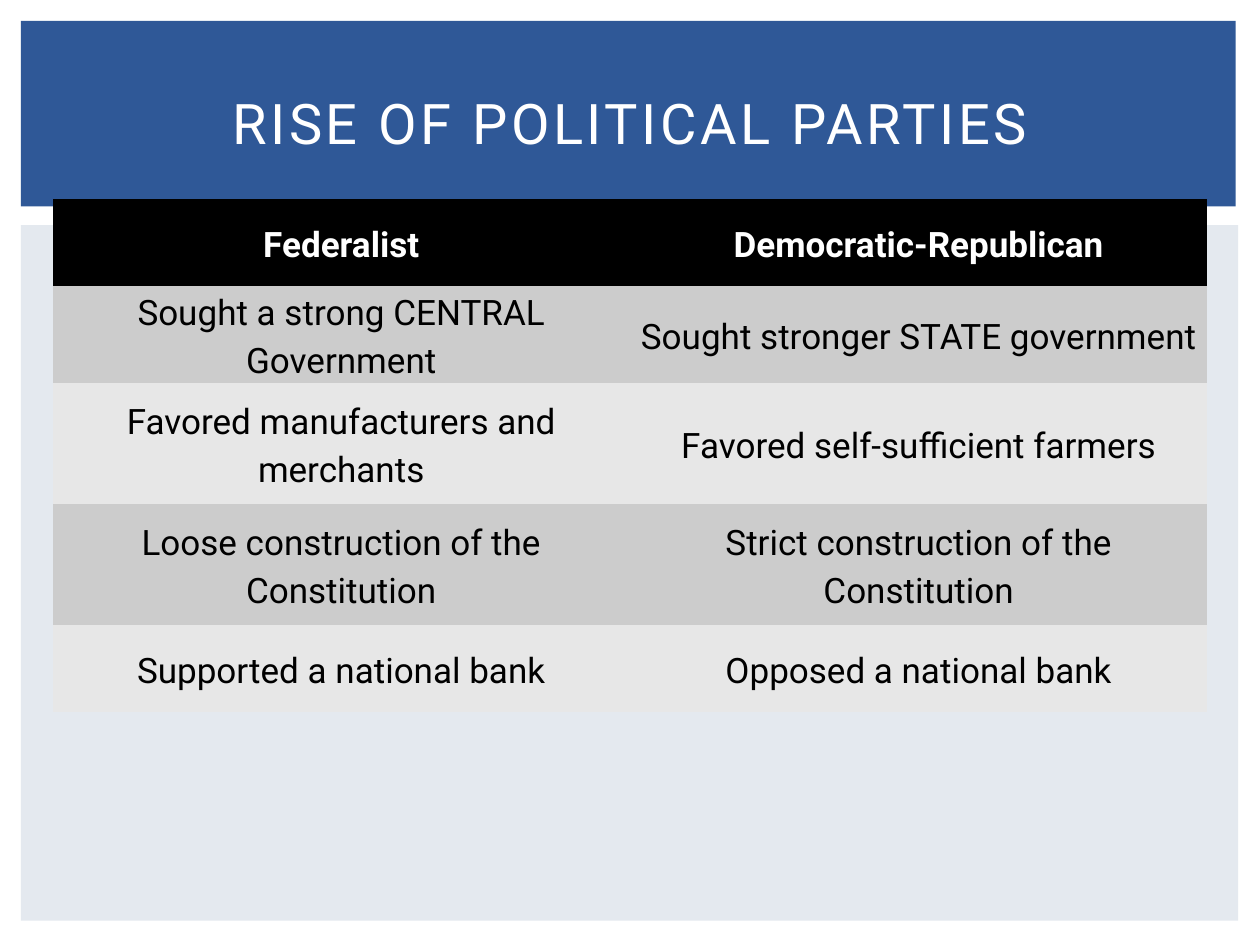
from pptx import Presentation
from pptx.dml.color import RGBColor
from pptx.enum.shapes import MSO_SHAPE
from pptx.enum.text import MSO_ANCHOR, PP_ALIGN
from pptx.oxml.ns import qn
from pptx.util import Cm, Pt

NO_GRID_STYLE = "{2D5ABB26-0587-4C30-8999-92F81FD0307C}"
ROW_HEIGHTS = [1.75, 1.75, 2.44, 2.44, 1.75]
PARTIES = [
    ("Federalist", "Democratic-Republican"),
    ("Sought a strong CENTRAL Government", "Sought stronger STATE government"),
    ("Favored manufacturers and merchants", "Favored self-sufficient farmers"),
    ("Loose construction of the Constitution", "Strict construction of the Constitution"),
    ("Supported a national bank", "Opposed a national bank"),
]


def set_fill(fill, color):
    """Give a shape or cell fill a solid hex colour."""
    fill.solid()
    fill.fore_color.rgb = RGBColor.from_string(color)


def write_text(tf, text, size=20, color="000000", bold=False, line_spacing=None, tracking=None):
    """Write one centred paragraph into a text frame."""
    tf.word_wrap = True
    p = tf.paragraphs[0]
    p.alignment = PP_ALIGN.CENTER
    p.line_spacing = line_spacing
    r = p.add_run()
    r.text = text
    r.font.name = "Roboto"
    r.font.size = Pt(size)
    r.font.bold = bold
    r.font.color.rgb = RGBColor.from_string(color)
    if tracking:
        r.font._element.set("spc", str(tracking * 100))


def add_panel(s, left, top, width, height, color):
    """Add a plain background rectangle."""
    sp = s.shapes.add_shape(MSO_SHAPE.RECTANGLE, Cm(left), Cm(top), Cm(width), Cm(height))
    sp.shadow.inherit = False
    sp.line.fill.background()
    set_fill(sp.fill, color)


def add_title(s, text):
    """Add the slide heading."""
    sp = s.shapes.add_textbox(Cm(1.06), Cm(1), Cm(23.29), Cm(2.92))
    sp.text_frame.vertical_anchor = MSO_ANCHOR.MIDDLE
    write_text(sp.text_frame, text, size=32, color="FFFFFF", tracking=2)


def add_comparison(s, rows):
    """Add the two-column table with a black header and grey bands."""
    table = s.shapes.add_table(len(rows), 2, Cm(1.06), Cm(4.02), Cm(23.28), Cm(sum(ROW_HEIGHTS))).table
    table._tbl.tblPr.find(qn("a:tableStyleId")).text = NO_GRID_STYLE
    for i, texts in enumerate(rows):
        table.rows[i].height = Cm(ROW_HEIGHTS[i])
        header = i == 0
        band = "000000" if header else ("E7E7E7", "CCCCCC")[i % 2]
        for cell, text in zip(table.rows[i].cells, texts):
            cell.vertical_anchor = MSO_ANCHOR.MIDDLE
            cell.margin_left = cell.margin_right = Cm(0.18)
            cell.margin_top = cell.margin_bottom = 0
            set_fill(cell.fill, band)
            write_text(cell.text_frame, text, bold=header, line_spacing=1.15,
                       color="FFFFFF" if header else "000000")


def main():
    """Build and save the slide."""
    prs = Presentation()
    prs.slide_width, prs.slide_height = Cm(25.4), Cm(19.05)
    s = prs.slides.add_slide(prs.slide_layouts[6])
    add_panel(s, 0.42, 4.54, 24.54, 14.02, "E4E9EF")
    add_panel(s, 0.42, 0.42, 24.49, 3.74, "2F5897")
    add_title(s, "RISE OF POLITICAL PARTIES")
    add_comparison(s, PARTIES)
    prs.save("out.pptx")


if __name__ == "__main__":
    main()
